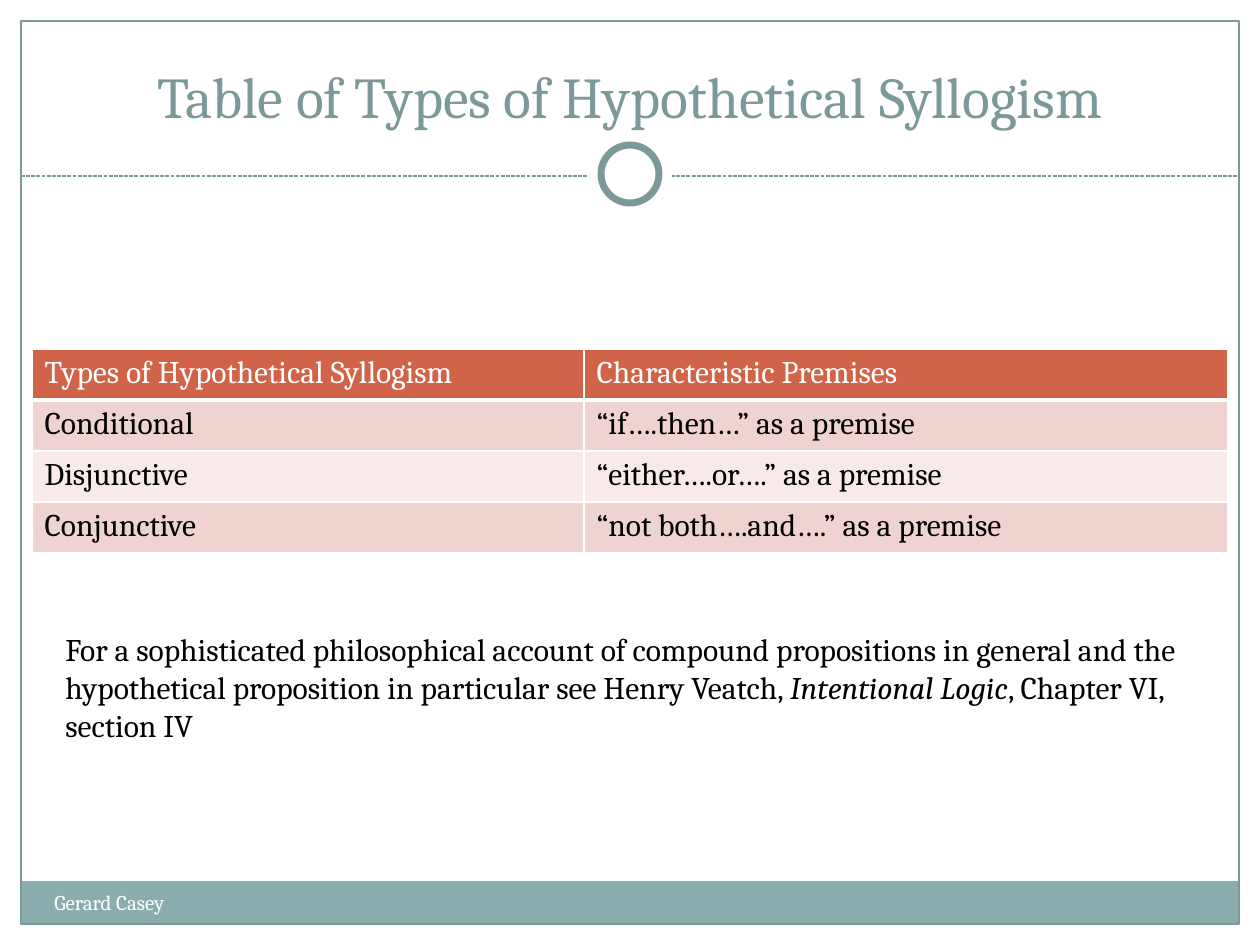
from lxml import etree
from pptx import Presentation
from pptx import util as u
from pptx.dml.color import RGBColor
from pptx.enum import dml, shapes, text
from pptx.oxml import ns

TITLE = "Table of Types of Hypothetical Syllogism"
AUTHOR = "Gerard Casey"
ROWS = [
    ("Types of Hypothetical Syllogism", "Characteristic Premises"),
    ("Conditional", "“if….then…” as a premise"),
    ("Disjunctive", "“either….or….” as a premise"),
    ("Conjunctive", "“not both….and….” as a premise"),
]
NOTE = [
    ("For a sophisticated philosophical account of compound propositions in general "
     "and the hypothetical proposition in particular see Henry Veatch, ", False),
    ("Intentional Logic", True),
    (", Chapter VI, section IV", False),
]
FONT = "Cambria"
WHITE, BLACK, TEAL, PALE_TEAL = "FFFFFF", "000000", "7C999A", "8CADAE"
HEADER, BANDS = "D16349", ("EED3D0", "F7EAE9")
WIDTH, HEIGHT = 1260, 945
EDGE, RULE_Y, RING_Y = 21, 176, 174
TABLE_LEFT, TABLE_TOP, ROW_HEIGHT, COLUMNS = 32, 349, 51, (552, 644)


def px(value):
    """Turn pixels into EMU."""
    return round(value * 914400 / 126)


def rgb(value):
    """Turn a hex string into a colour."""
    return RGBColor.from_string(value)


def set_line(line, color, points):
    """Give a line its colour and width."""
    line.color.rgb = rgb(color)
    line.width = u.Pt(points)


def add_shape(slide, kind, box, fill=None, line=None, points=0.75):
    """Add a flat preset shape."""
    shape = slide.shapes.add_shape(kind, *map(px, box))
    shape.shadow.inherit = False
    if fill:
        shape.fill.solid()
        shape.fill.fore_color.rgb = rgb(fill)
    else:
        shape.fill.background()
    if line:
        set_line(shape.line, line, points)
    else:
        shape.line.fill.background()


def add_runs(paragraph, runs, size, color):
    """Fill a paragraph with (words, italic) runs."""
    for words, italic in runs:
        run = paragraph.add_run()
        run.text = words
        run.font.color.rgb = rgb(color)
        formats = {"name": FONT, "size": u.Pt(size), "italic": italic, "bold": False}
        for name, value in formats.items():
            setattr(run.font, name, value)


def add_text(slide, box, runs, size, color, align=text.PP_ALIGN.LEFT,
             anchor=text.MSO_ANCHOR.TOP):
    """Add a wrapping text box."""
    frame = slide.shapes.add_textbox(*map(px, box)).text_frame
    frame.word_wrap = True
    frame.vertical_anchor = anchor
    frame.paragraphs[0].alignment = align
    add_runs(frame.paragraphs[0], runs, size, color)


def add_borders(cell, bottom):
    """Draw white borders around a cell."""
    properties = cell._tc.get_or_add_tcPr()
    for side, points in {"L": 1, "R": 1, "T": 1, "B": bottom}.items():
        border = etree.SubElement(properties, ns.qn("a:ln" + side), w=str(u.Pt(points)))
        fill = etree.SubElement(border, ns.qn("a:solidFill"))
        etree.SubElement(fill, ns.qn("a:srgbClr"), val=WHITE)


def add_frame(slide):
    """Draw the footer band, border, dashed rule and ring."""
    rectangle, oval = shapes.MSO_SHAPE.RECTANGLE, shapes.MSO_SHAPE.OVAL
    inner = WIDTH - 2 * EDGE
    add_shape(slide, rectangle, (EDGE, 881, inner, 43), PALE_TEAL)
    add_shape(slide, rectangle, (EDGE, EDGE, inner, HEIGHT - 2 * EDGE), line=TEAL)
    rule = slide.shapes.add_connector(
        shapes.MSO_CONNECTOR.STRAIGHT, px(EDGE), px(RULE_Y), px(WIDTH - EDGE), px(RULE_Y))
    set_line(rule.line, TEAL, 0.75)
    rule.line.dash_style = dml.MSO_LINE.SQUARE_DOT
    etree.SubElement(rule._element.spPr, ns.qn("a:effectLst"))
    for size, line in ((84, None), (58, TEAL)):
        box = ((WIDTH - size) / 2, RING_Y - size / 2, size, size)
        add_shape(slide, oval, box, WHITE, line, 4)


def add_syllogisms(slide):
    """Add the table of syllogism types."""
    box = (TABLE_LEFT, TABLE_TOP, sum(COLUMNS), ROW_HEIGHT * len(ROWS))
    table = slide.shapes.add_table(len(ROWS), len(COLUMNS), *map(px, box)).table
    for column, width in zip(table.columns, COLUMNS):
        column.width = px(width)
    for r, row in enumerate(ROWS):
        table.rows[r].height = px(ROW_HEIGHT)
        for c, words in enumerate(row):
            cell = table.cell(r, c)
            add_borders(cell, 1 if r else 3)
            cell.fill.solid()
            cell.fill.fore_color.rgb = rgb(BANDS[(r - 1) % 2] if r else HEADER)
            add_runs(cell.text_frame.paragraphs[0], [(words, False)], 18,
                     BLACK if r else WHITE)


def main():
    """Build the slide."""
    presentation = Presentation()
    presentation.slide_width, presentation.slide_height = px(WIDTH), px(HEIGHT)
    slide = presentation.slides.add_slide(presentation.slide_layouts[6])
    add_frame(slide)
    add_text(slide, (42, 32, 1176, 104), [(TITLE, False)], 33, TEAL,
             text.PP_ALIGN.CENTER, text.MSO_ANCHOR.BOTTOM)
    add_text(slide, (42, 883, 494, 50), [(AUTHOR, False)], 12, WHITE)
    add_syllogisms(slide)
    add_text(slide, (53, 624, 1165, 127), NOTE, 18, BLACK)
    presentation.save("out.pptx")


if __name__ == "__main__":
    main()
